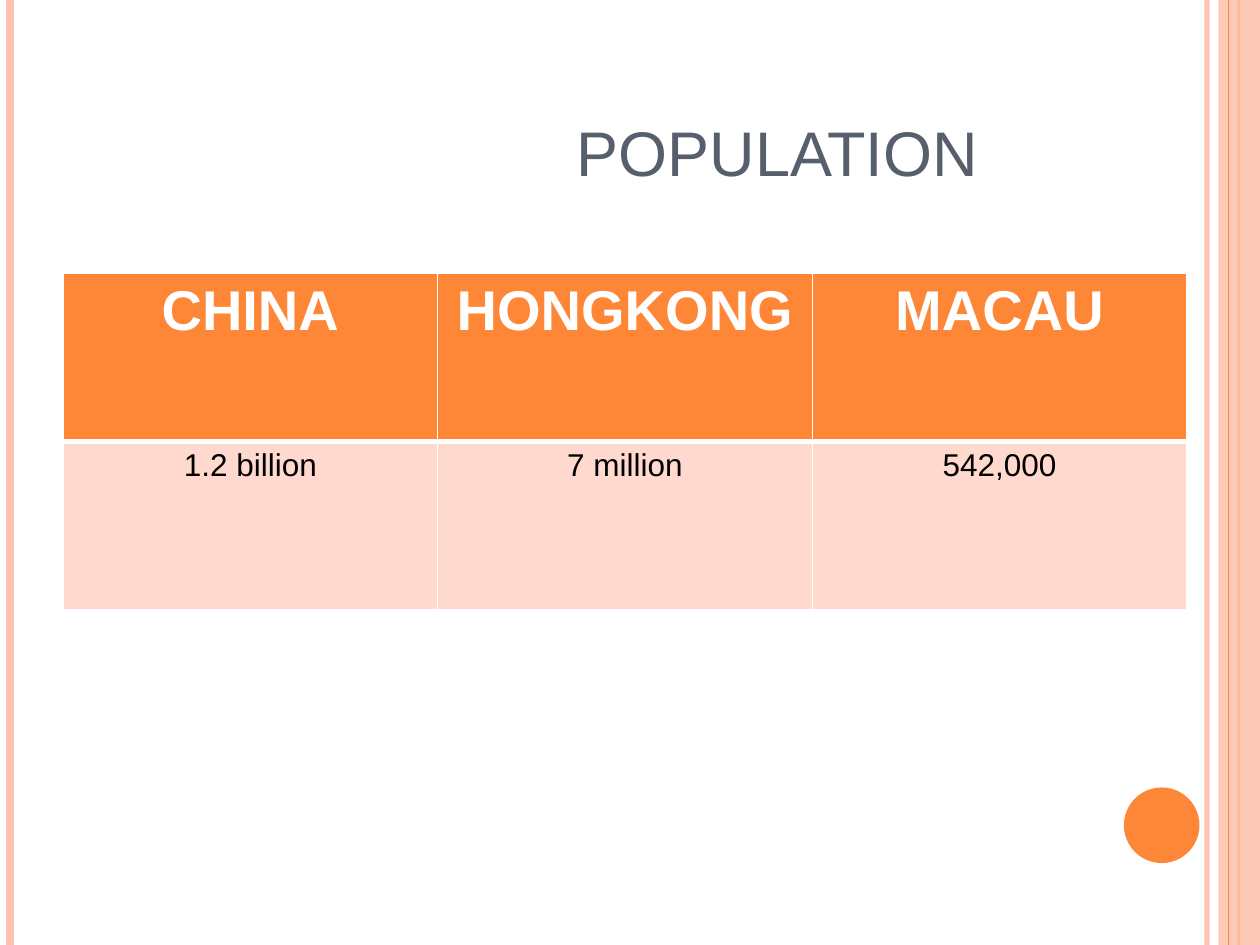
import pptx
import pptx.util
import pptx.dml.color
import pptx.enum.shapes
import pptx.enum.text
import pptx.oxml
import pptx.oxml.ns
from lxml import etree

Inches = pptx.util.Inches
Pt = pptx.util.Pt
qn = pptx.oxml.ns.qn
SHAPE = pptx.enum.shapes.MSO_SHAPE
COLORS = {"orange": "FE8637", "peach": "FEC3AE", "pale": "FFD9CE",
          "slate": "575F6D", "white": "FFFFFF", "black": "000000"}
ROWS = [["CHINA", "HONGKONG", "MACAU"],
        ["1.2 billion", "7 million", "542,000"]]


def rgb(name):
    return pptx.dml.color.RGBColor.from_string(COLORS[name])


def fade(item, alpha):
    color = next(item._element.spPr.iter(qn("a:srgbClr")))
    etree.SubElement(color, qn("a:alpha")).set("val", str(alpha * 1000))


def write(frame, text, size=18, color="black", bold=False):
    para = frame.paragraphs[0]
    para.alignment = pptx.enum.text.PP_ALIGN.CENTER
    run = para.add_run()
    run.text = text
    run.font.name = "Arial"
    run.font.size = Pt(size)
    run.font.bold = bold
    run.font.color.rgb = rgb(color)


def add_rule(slide, x, top, height, color, width, alpha=100):
    rule = slide.shapes.add_connector(
        pptx.enum.shapes.MSO_CONNECTOR.STRAIGHT,
        Inches(x), Inches(top), Inches(x), Inches(top + height))
    rule.line.color.rgb = rgb(color)
    rule.line.width = Pt(width)
    if alpha < 100:
        fade(rule, alpha)
    etree.SubElement(rule._element.spPr, qn("a:effectLst"))


def add_solid(slide, kind, box, color):
    solid = slide.shapes.add_shape(kind, *map(Inches, box))
    solid.shadow.inherit = False
    solid.fill.solid()
    solid.fill.fore_color.rgb = rgb(color)
    solid.line.fill.background()
    return solid


def add_frame(slide, left, top, width, height):
    right = left + width
    add_rule(slide, right - 0.42, top, height, "peach", 3, alpha=93)
    add_rule(slide, left + 0.08, top, height, "peach", 4.5)
    add_rule(slide, right - 0.17, top, height, "orange", 1.5)
    band = add_solid(slide, SHAPE.RECTANGLE,
                     (right - 0.33, top, 0.33, height), "peach")
    fade(band, 87)
    add_rule(slide, right - 0.25, top, height, "orange", 0.75)
    add_solid(slide, SHAPE.OVAL,
              (right - 1.08, top + height - 1.25, 0.6, 0.6), "orange")


def add_title(slide, left, top, width, height):
    title = slide.shapes.title
    title.left, title.top = Inches(left), Inches(top)
    title.width, title.height = Inches(width), Inches(height)
    frame = title.text_frame
    frame.margin_left = Inches(3.27)
    frame.vertical_anchor = pptx.enum.text.MSO_ANCHOR.BOTTOM
    write(frame, "POPULATION", size=36, color="slate")


def add_edges(cell, **widths):
    props = cell._tc.get_or_add_tcPr()
    for spot, (side, width) in enumerate(widths.items()):
        edge = pptx.oxml.parse_xml(
            f'<a:{side} {pptx.oxml.ns.nsdecls("a")} w="{Pt(width)}">'
            f'<a:solidFill><a:srgbClr val="{COLORS["white"]}"/></a:solidFill>'
            f'</a:{side}>')
        props.insert(spot, edge)


def add_grid(slide, left, top, width, height):
    box = map(Inches, (left, top, width, height))
    grid = slide.shapes.add_table(len(ROWS), len(ROWS[0]), *box).table
    for r, row in enumerate(ROWS):
        head = r == 0
        for c, text in enumerate(row):
            cell = grid.cell(r, c)
            cell.fill.solid()
            cell.fill.fore_color.rgb = rgb("orange" if head else "pale")
            add_edges(cell, lnL=1, lnR=1, lnT=1 if head else 3,
                      lnB=3 if head else 1)
            write(cell.text_frame, text, size=32 if head else 18,
                  color="white" if head else "black", bold=head)


def main():
    deck = pptx.Presentation()
    deck.slide_width, deck.slide_height = Inches(10), Inches(7.5)
    slide = deck.slides.add_slide(deck.slide_layouts[5])
    add_frame(slide, 0, 0, 10, 7.5)
    add_title(slide, 0.5, 0.3, 8.17, 1.25)
    add_grid(slide, 0.5, 2.17, 8.92, 2.67)
    deck.save("out.pptx")


if __name__ == "__main__":
    main()
